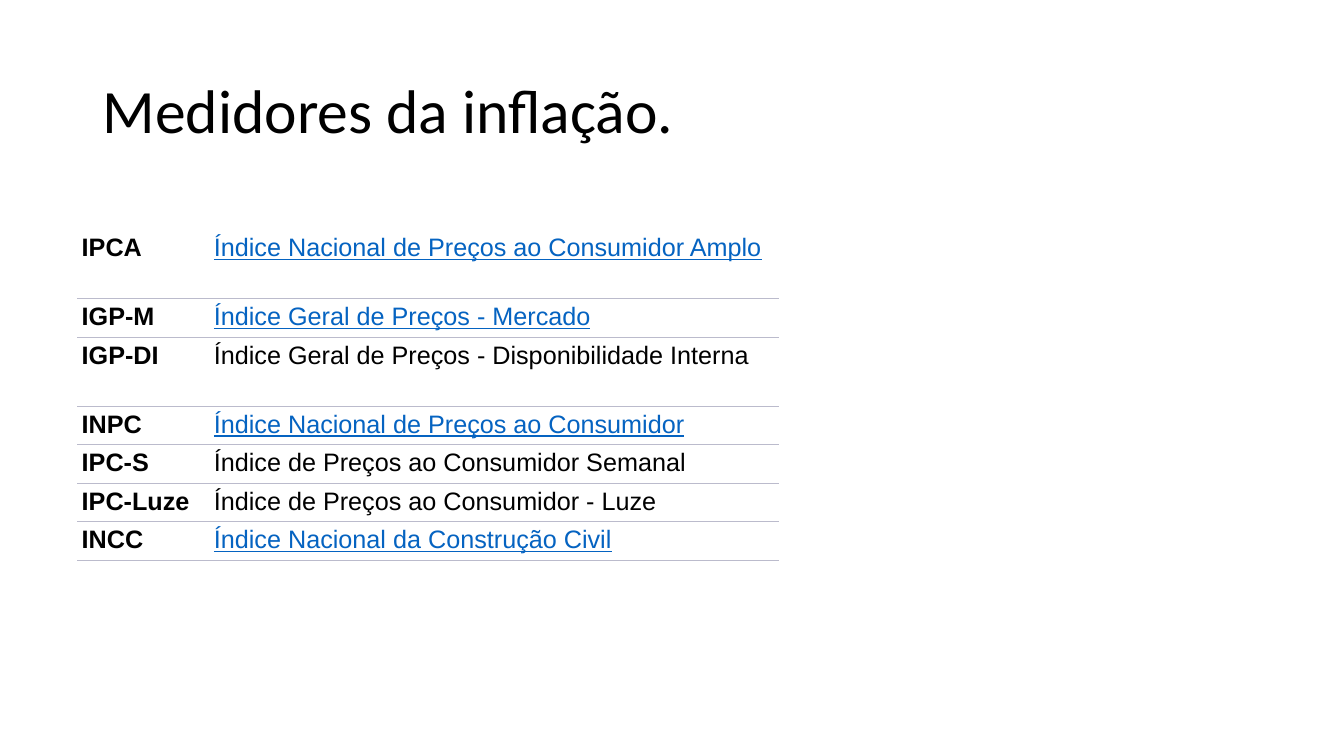
from lxml.etree import SubElement
from pptx import Presentation
from pptx.dml.color import RGBColor
from pptx.enum.text import MSO_ANCHOR, PP_ALIGN
from pptx.oxml.ns import qn
from pptx.util import Cm, Pt

BLACK, WHITE, LINK, RULE = "000000", "FFFFFF", "0563C1", "BBBBCC"
NO_STYLE = "{2D5ABB26-0587-4C30-8999-92F81FD0307C}"
SHORT, TALL = 0.97, 1.74

# acronym, full name, shown as a link, row height in cm
INDEXES = [
    ("IPCA", "Índice Nacional de Preços ao Consumidor Amplo", True, TALL),
    ("IGP-M", "Índice Geral de Preços - Mercado", True, SHORT),
    ("IGP-DI", "Índice Geral de Preços - Disponibilidade Interna", False, TALL),
    ("INPC", "Índice Nacional de Preços ao Consumidor", True, SHORT),
    ("IPC-S", "Índice de Preços ao Consumidor Semanal", False, SHORT),
    ("IPC-Luze", "Índice de Preços ao Consumidor - Luze", False, SHORT),
    ("INCC", "Índice Nacional da Construção Civil", True, SHORT),
]


def style_font(font, name, size, color):
    font.name = name
    font.size = Pt(size)
    font.color.rgb = RGBColor.from_string(color)


def add_bottom_rule(cell, color):
    """Draw the cell's lower border; it must precede the fill in tcPr."""
    tc_pr = cell._tc.get_or_add_tcPr()
    line = SubElement(tc_pr, qn("a:lnB"), w=str(Pt(0.75)))
    fill = SubElement(line, qn("a:solidFill"))
    SubElement(fill, qn("a:srgbClr"), val=color)
    tc_pr.insert(0, line)


prs = Presentation()
prs.slide_width, prs.slide_height = Cm(33.87), Cm(19.05)
s = prs.slides.add_slide(prs.slide_layouts[5])

title = s.shapes.title
title.left, title.top, title.width, title.height = Cm(2.33), Cm(1.01), Cm(29.21), Cm(3.68)
tf = title.text_frame
tf.text = "Medidores da inflação."
tf.vertical_anchor = MSO_ANCHOR.MIDDLE
p = tf.paragraphs[0]
p.alignment = PP_ALIGN.LEFT
p.line_spacing = 0.9
style_font(p.font, "Calibri", 44, BLACK)

table_height = sum(height for *_, height in INDEXES)
frame = s.shapes.add_table(len(INDEXES), 2, Cm(1.95), Cm(5.79), Cm(17.68), Cm(table_height))
next(frame.element.iter(qn("a:tableStyleId"))).text = NO_STYLE
table = frame.table
table.first_row = table.horz_banding = False
table.columns[0].width, table.columns[1].width = Cm(3.33), Cm(14.35)

for row, (acronym, name, is_link, height) in zip(table.rows, INDEXES):
    row.height = Cm(height)
    for cell, text in zip(row.cells, (acronym, name)):
        cell.margin_left = cell.margin_right = Cm(0.11)
        cell.margin_top = cell.margin_bottom = Cm(0.1)
        cell.fill.solid()
        cell.fill.fore_color.rgb = RGBColor.from_string(WHITE)
        add_bottom_rule(cell, RULE)
        cell.text = text
        linked = is_link and text == name
        font = cell.text_frame.paragraphs[0].font
        style_font(font, "Arial", 18, LINK if linked else BLACK)
        font.bold = text == acronym
        font.underline = linked

prs.save("out.pptx")
